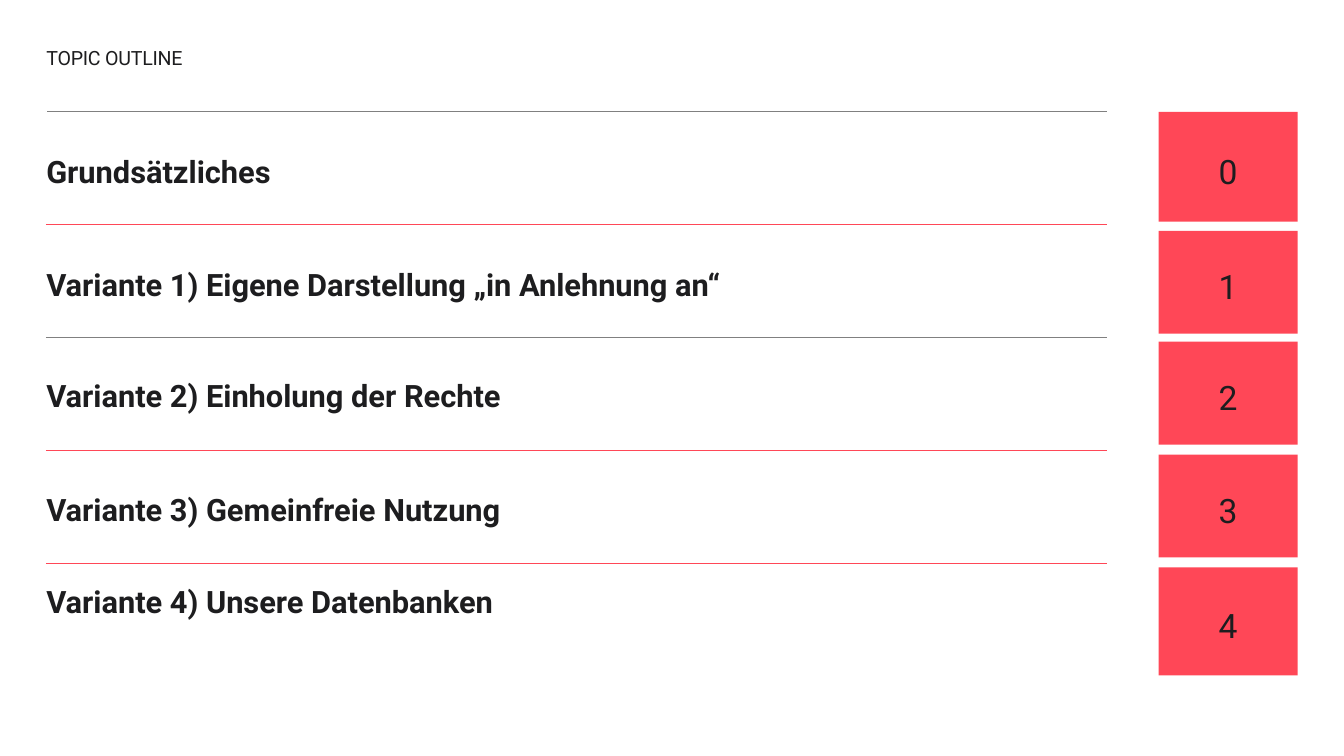
from lxml.etree import SubElement
from pptx import Presentation
from pptx.dml.color import RGBColor
from pptx.enum.shapes import MSO_SHAPE as Shape
from pptx.enum.text import MSO_ANCHOR as Anchor, PP_ALIGN as Align
from pptx.oxml.ns import qn
from pptx.util import Inches, Pt

RED = RGBColor(0xFF, 0x47, 0x57)
GREY = RGBColor(0x80, 0x80, 0x80)
INK = RGBColor(0x1D, 0x1D, 0x1F)
WHITE = RGBColor(0xFF, 0xFF, 0xFF)

LEFT = 0.46
TABLE_TOP = 1.11
ROW_HEIGHT = 1.12
COLUMN_WIDTHS = (10.53, 0.51, 1.37)
RULE_COLORS = (GREY, RED, GREY, RED, RED)

TOPICS = (
    ("Grundsätzliches", 1.12, 1.09),
    ("Variante 1) Eigene Darstellung „in Anlehnung an“", 2.24, 1.09),
    ("Variante 2) Einholung der Rechte", 3.34, 1.09),
    ("Variante 3) Gemeinfreie Nutzung", 4.47, 1.09),
    ("Variante 4) Unsere Datenbanken", 5.6, 0.66),
)
NUMBER_SPANS = ((1.11, 1.09), (2.29, 1.02), (3.39, 1.02), (4.51, 1.02), (5.63, 1.07))

TITLE_FORMAT = {"size": Pt(14), "bold": False}
TOPIC_FORMAT = {"size": Pt(22), "bold": True}
NUMBER_FORMAT = {"size": Pt(24), "bold": False}
FRAME_FORMAT = {
    "word_wrap": True,
    "vertical_anchor": Anchor.MIDDLE,
    "margin_left": 0,
    "margin_top": 0,
    "margin_right": 0,
    "margin_bottom": 0,
}


def set_values(target, values):
    for name, value in values.items():
        setattr(target, name, value)


def write_text(shape, text, font_format, line_spacing=1.2, align=Align.LEFT):
    frame = shape.text_frame
    set_values(frame, FRAME_FORMAT)
    para = frame.paragraphs[0]
    set_values(para, {"line_spacing": line_spacing, "alignment": align})
    span = para.add_run()
    span.text = text
    set_values(span.font, {"name": "Roboto", **font_format})
    span.font.color.rgb = INK
    return span


def add_title(page, text):
    title = page.shapes.title
    bounds = {"left": LEFT, "top": 0.38, "width": 12.41, "height": 0.42}
    set_values(title, {side: Inches(value) for side, value in bounds.items()})
    span = write_text(title, text, TITLE_FORMAT, line_spacing=0.9)
    span.font._element.set("spc", "-20")


def add_border(cell, side, color):
    properties = cell._tc.get_or_add_tcPr()
    line = SubElement(properties, qn(f"a:{side}"), w=str(Pt(1)))
    fill = SubElement(line, qn("a:solidFill"))
    SubElement(fill, qn("a:srgbClr"), val=str(color))


def add_ruled_table(page):
    row_count = len(TOPICS)
    table = page.shapes.add_table(
        row_count, len(COLUMN_WIDTHS), Inches(LEFT), Inches(TABLE_TOP),
        Inches(sum(COLUMN_WIDTHS)), Inches(ROW_HEIGHT * row_count),
    ).table
    set_values(table, {"first_row": False, "horz_banding": False})
    for column, width in zip(table.columns, COLUMN_WIDTHS):
        column.width = Inches(width)
    for index in range(row_count):
        table.rows[index].height = Inches(ROW_HEIGHT)
        topic_cell = table.cell(index, 0)
        add_border(topic_cell, "lnT", RULE_COLORS[index])
        if index + 1 < row_count:
            add_border(topic_cell, "lnB", RULE_COLORS[index + 1])
    for cell in table.iter_cells():
        cell.fill.solid()
        cell.fill.fore_color.rgb = WHITE


def add_topic(page, text, top, height):
    box = page.shapes.add_textbox(
        Inches(LEFT), Inches(top), Inches(10.43), Inches(height))
    write_text(box, text, TOPIC_FORMAT)


def add_number(page, number, top, height):
    tile = page.shapes.add_shape(
        Shape.RECTANGLE, Inches(11.49), Inches(top), Inches(1.38), Inches(height))
    tile.shadow.inherit = False
    tile.fill.solid()
    tile.fill.fore_color.rgb = RED
    tile.line.fill.background()
    write_text(tile, str(number), NUMBER_FORMAT, align=Align.CENTER)


def main():
    deck = Presentation()
    set_values(deck, {"slide_width": Inches(13.33), "slide_height": Inches(7.5)})
    page = deck.slides.add_slide(deck.slide_layouts[5])
    add_title(page, "TOPIC OUTLINE")
    add_ruled_table(page)
    for topic in TOPICS:
        add_topic(page, *topic)
    for number, (top, height) in enumerate(NUMBER_SPANS):
        add_number(page, number, top, height)
    deck.save("out.pptx")


if __name__ == "__main__":
    main()
